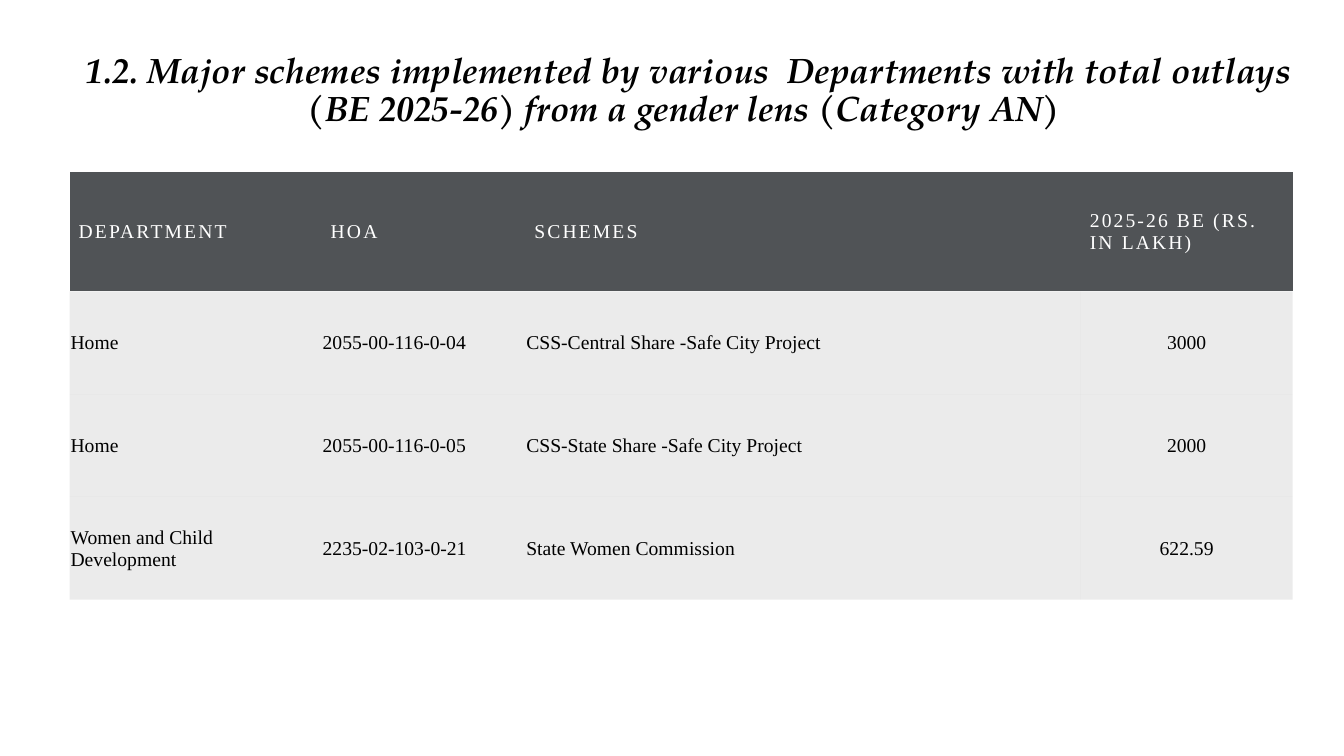
import pptx
import pptx.util
import pptx.dml.color
import pptx.enum.text
import pptx.oxml
import pptx.oxml.ns

TITLE = (
    "1.2. Major schemes implemented by various  Departments with total outlays "
    "(BE 2025-26) from a gender lens (Category AN) "
)
SCHEMES = [
    ("DEPARTMENT", "HOA", "SCHEMES", "2025-26 BE (RS. IN LAKH)"),
    ("Home", "2055-00-116-0-04", "CSS-Central Share -Safe City Project", "3000"),
    ("Home", "2055-00-116-0-05", "CSS-State Share -Safe City Project", "2000"),
    ("Women and Child Development", "2235-02-103-0-21", "State Women Commission", "622.59"),
]
COLORS = {"header": "505356", "header_text": "FFFFFF", "ink": "000000"}
SLIDE_SIZE = (13.33, 7.5)
TITLE_BOX = {"left": 0.69, "top": 0.53, "width": 12.28, "height": 0.74}
COLUMNS = [2.5, 2.02, 5.51, 2.1]
ROWS = [1.18] + [1.02] * 3
TABLE_TOP = 1.71
BODY_OPACITY = 8
PLAIN_STYLE = "{2D5ABB26-0587-4C30-8999-92F81FD0307C}"
TITLE_FONT = {"name": "TeX Gyre Pagella", "size": pptx.util.Pt(25.2), "bold": True, "italic": True}
TABLE_FONT = {"name": "Times New Roman", "size": pptx.util.Pt(14), "bold": False}
HEADER_MARGINS = dict.fromkeys(("margin_left", "margin_top", "margin_right", "margin_bottom"), 0.09)
BODY_MARGINS = {**dict.fromkeys(HEADER_MARGINS, 0.01), "margin_bottom": 0}
ALIGN = pptx.enum.text.PP_ALIGN
MIDDLE = pptx.enum.text.MSO_ANCHOR.MIDDLE


def rgb(name):
    return pptx.dml.color.RGBColor.from_string(COLORS[name])


def apply(target, values):
    for name, value in values.items():
        setattr(target, name, value)


def inches(values):
    return {name: pptx.util.Inches(value) for name, value in values.items()}


def write(para, text, font, color, align):
    para.alignment = align
    span = para.add_run()
    span.text = text
    apply(span.font, font)
    span.font.color.rgb = rgb(color)
    return span


def add_title(page):
    box = page.shapes.title
    apply(box, inches(TITLE_BOX))
    frame = box.text_frame
    apply(frame, {"word_wrap": True, "vertical_anchor": MIDDLE,
                  "auto_size": pptx.enum.text.MSO_AUTO_SIZE.NONE})
    para = frame.paragraphs[0]
    para.line_spacing = 0.9
    write(para, TITLE, TITLE_FONT, "ink", ALIGN.CENTER)


def fill_cell(cell, text, is_header, is_amount):
    apply(cell, inches(HEADER_MARGINS if is_header else BODY_MARGINS))
    cell.vertical_anchor = MIDDLE
    cell.fill.solid()
    cell.fill.fore_color.rgb = rgb("header" if is_header else "ink")
    align = ALIGN.CENTER if is_amount and not is_header else ALIGN.LEFT
    color = "header_text" if is_header else "ink"
    span = write(cell.text_frame.paragraphs[0], text, TABLE_FONT, color, align)
    if is_header:
        span.font._element.set("spc", "150")
    else:
        tint = cell._tc.tcPr.find(".//" + pptx.oxml.ns.qn("a:srgbClr"))
        alpha = pptx.oxml.parse_xml(
            f'<a:alpha {pptx.oxml.ns.nsdecls("a")} val="{BODY_OPACITY * 1000}"/>'
        )
        tint.append(alpha)


def add_schemes(page):
    left, top, width, height = map(
        pptx.util.Inches, (TITLE_BOX["left"], TABLE_TOP, sum(COLUMNS), sum(ROWS))
    )
    table = page.shapes.add_table(len(ROWS), len(COLUMNS), left, top, width, height).table
    table.horz_banding = False
    table._tbl.tblPr.find(pptx.oxml.ns.qn("a:tableStyleId")).text = PLAIN_STYLE
    for column, size in zip(table.columns, COLUMNS):
        column.width = pptx.util.Inches(size)
    for row, size in zip(table.rows, ROWS):
        row.height = pptx.util.Inches(size)
    for row_index, entries in enumerate(SCHEMES):
        for column_index, text in enumerate(entries):
            cell = table.cell(row_index, column_index)
            fill_cell(cell, text, row_index == 0, column_index == len(COLUMNS) - 1)


def main():
    deck = pptx.Presentation()
    deck.slide_width, deck.slide_height = map(pptx.util.Inches, SLIDE_SIZE)
    page = deck.slides.add_slide(deck.slide_layouts.get_by_name("Title Only"))
    add_title(page)
    add_schemes(page)
    deck.save("out.pptx")


if __name__ == "__main__":
    main()
